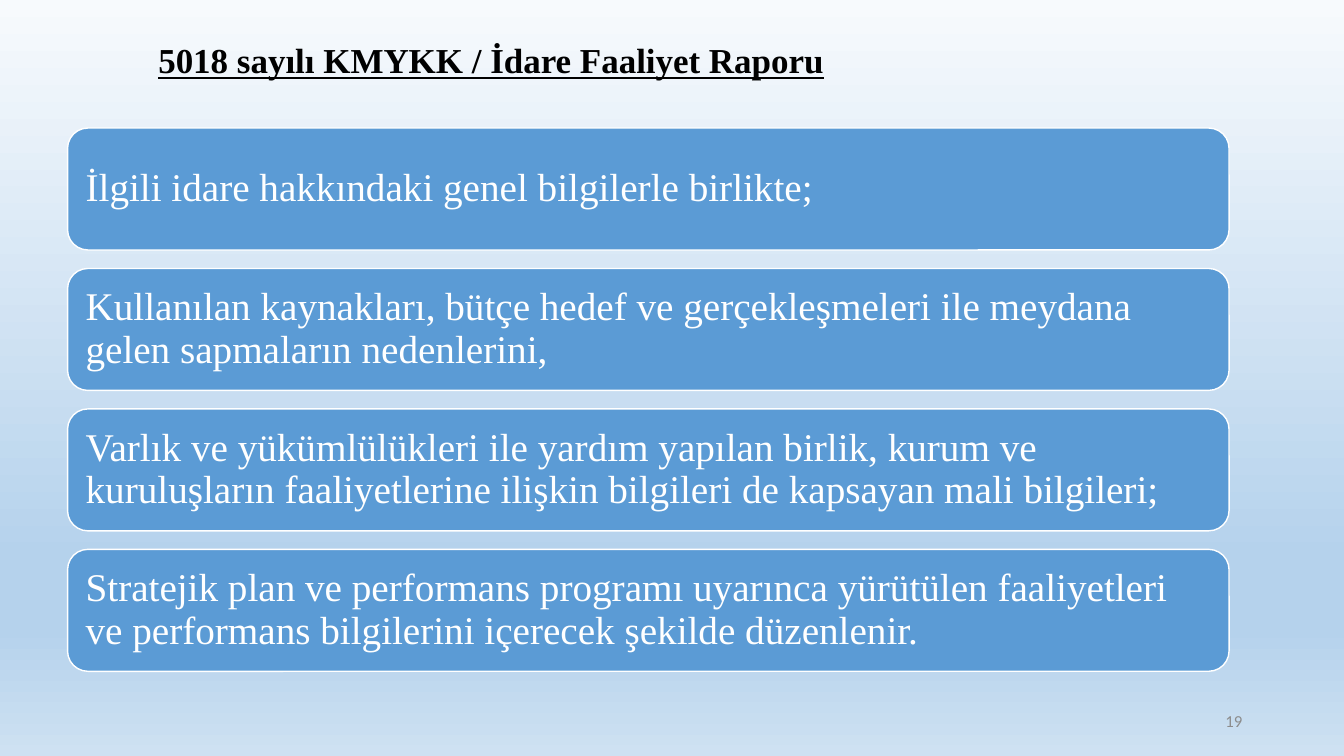
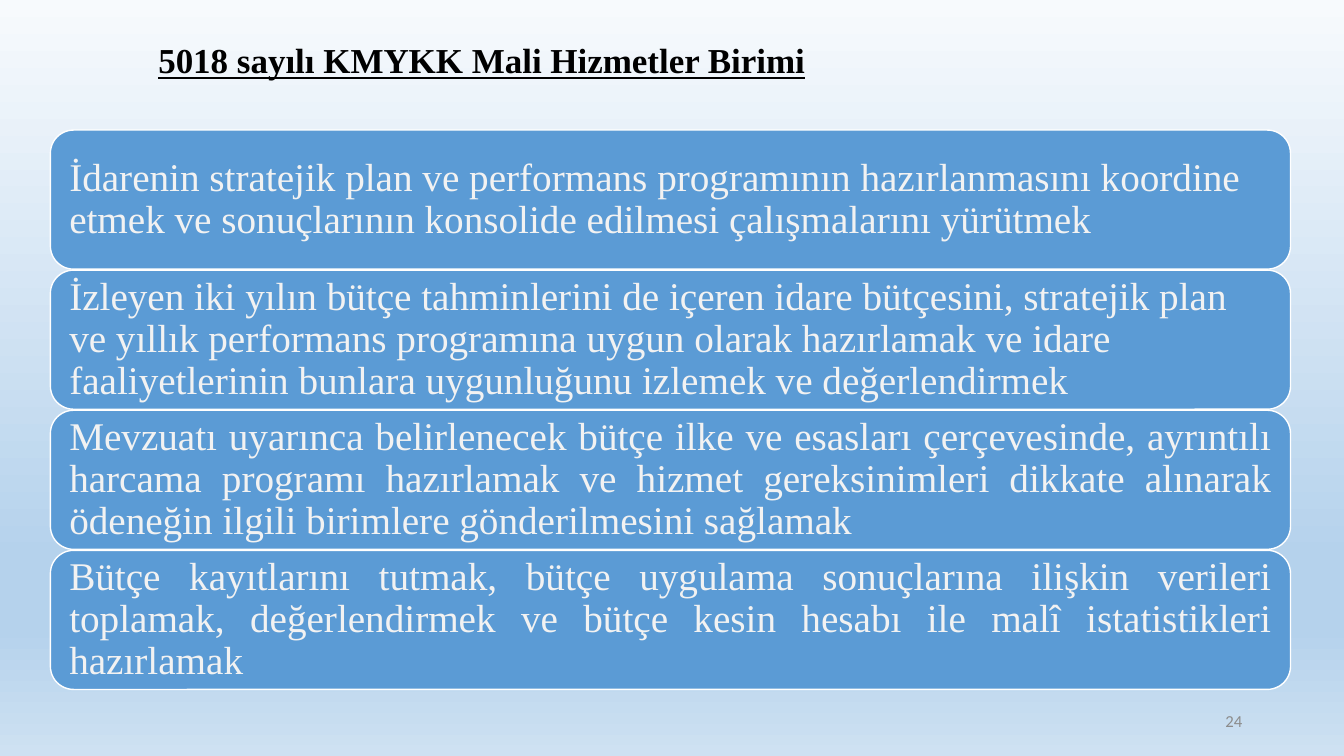
from pptx import Presentation
from pptx.dml.color import RGBColor
from pptx.enum.shapes import MSO_SHAPE as SHAPE
from pptx.enum.text import MSO_ANCHOR as ANCHOR, PP_ALIGN as ALIGN
from pptx.oxml.ns import qn
from pptx.util import Inches, Pt
from lxml import etree

COLORS = {
    "sky_top": "F7FAFD",
    "sky_mid": "B5D2EC",
    "sky_low": "CEE1F2",
    "box": "5B9BD5",
    "white": "FFFFFF",
    "pale": "F2F2F2",
    "black": "000000",
    "gray": "8C8C8C",
}
SERIF = "Times New Roman"


def rgb(name):
    return RGBColor.from_string(COLORS[name])


def write(sp, text, size, color, font=SERIF, align=ALIGN.LEFT, bold=False,
          underline=False, spacing=0.9, inset=None):
    tf = sp.text_frame
    tf.word_wrap = True
    tf.vertical_anchor = ANCHOR.MIDDLE
    if inset is not None:
        tf.margin_left = tf.margin_right = Inches(inset)
        tf.margin_top = tf.margin_bottom = Inches(inset)
    p = tf.paragraphs[0]
    p.alignment = align
    p.line_spacing = spacing
    r = p.add_run()
    r.text = text
    r.font.name = font
    r.font.size = Pt(size)
    r.font.bold = bold
    r.font.underline = underline
    r.font.color.rgb = rgb(color)


prs = Presentation()
prs.slide_width = Inches(13.33)
prs.slide_height = Inches(7.5)
layout = prs.slide_layouts.get_by_name("Title Only")

fill = prs.slide_master.background.fill
fill.gradient()
fill.gradient_angle = 270
stops = next(prs.slide_master.element.iter(qn("a:gsLst")))
for stop in list(stops):
    stops.remove(stop)
for pos, color in [(0, "sky_top"), (74, "sky_mid"), (83, "sky_mid"), (100, "sky_low")]:
    stop = etree.SubElement(stops, qn("a:gs"), pos=str(pos * 1000))
    etree.SubElement(stop, qn("a:srgbClr"), val=COLORS[color])

slides = [
    {
        "title": "5018 sayılı KMYKK / İdare Faaliyet Raporu",
        "number": "19",
        "left": 0.67, "top": 1.27, "width": 11.52, "height": 1.21, "bottom": 6.66,
        "color": "white",
        "boxes": [
            ("İlgili idare hakkındaki genel bilgilerle birlikte;", ALIGN.LEFT),
            ("Kullanılan kaynakları, bütçe hedef ve gerçekleşmeleri ile meydana "
             "gelen sapmaların nedenlerini,", ALIGN.LEFT),
            ("Varlık ve yükümlülükleri ile yardım yapılan birlik, kurum ve "
             "kuruluşların faaliyetlerine ilişkin bilgileri de kapsayan mali "
             "bilgileri;", ALIGN.LEFT),
            ("Stratejik plan ve performans programı uyarınca yürütülen faaliyetleri "
             "ve performans bilgilerini içerecek şekilde düzenlenir.", ALIGN.LEFT),
        ],
    },
    {
        "title": "5018 sayılı KMYKK Mali Hizmetler Birimi",
        "number": "24",
        "left": 0.5, "top": 1.29, "width": 12.3, "height": 1.38, "bottom": 6.84,
        "color": "pale",
        "boxes": [
            ("İdarenin stratejik plan ve performans programının hazırlanmasını "
             "koordine etmek ve sonuçlarının konsolide edilmesi çalışmalarını "
             "yürütmek", ALIGN.LEFT),
            ("İzleyen iki yılın bütçe tahminlerini de içeren idare bütçesini, "
             "stratejik plan ve yıllık performans programına uygun olarak "
             "hazırlamak ve idare faaliyetlerinin bunlara uygunluğunu izlemek ve "
             "değerlendirmek", ALIGN.LEFT),
            ("Mevzuatı uyarınca belirlenecek bütçe ilke ve esasları çerçevesinde, "
             "ayrıntılı harcama programı hazırlamak ve hizmet gereksinimleri "
             "dikkate alınarak ödeneğin ilgili birimlere gönderilmesini sağlamak",
             ALIGN.JUSTIFY),
            ("Bütçe kayıtlarını tutmak, bütçe uygulama sonuçlarına ilişkin verileri "
             "toplamak, değerlendirmek ve bütçe kesin hesabı ile malî "
             "istatistikleri hazırlamak", ALIGN.JUSTIFY),
        ],
    },
]

for data in slides:
    s = prs.slides.add_slide(layout)

    title = s.shapes.title
    title.left, title.top = Inches(1.47), Inches(0.22)
    title.width, title.height = Inches(10.52), Inches(0.8)
    write(title, data["title"], 25, "black", bold=True, underline=True)

    number = s.shapes.add_textbox(Inches(9.42), Inches(6.95), Inches(3), Inches(0.4))
    write(number, data["number"], 12, "gray", font="Calibri", align=ALIGN.RIGHT,
          spacing=1.0)

    boxes = data["boxes"]
    pitch = (data["bottom"] - data["top"] - data["height"]) / (len(boxes) - 1)
    for i, (text, align) in enumerate(boxes):
        sp = s.shapes.add_shape(
            SHAPE.ROUNDED_RECTANGLE, Inches(data["left"]),
            Inches(data["top"] + i * pitch), Inches(data["width"]),
            Inches(data["height"]))
        sp.shadow.inherit = False
        sp.fill.solid()
        sp.fill.fore_color.rgb = rgb("box")
        sp.line.color.rgb = rgb("white")
        sp.line.width = Pt(1)
        write(sp, text, 28, data["color"], align=align, inset=0.12)

prs.save("out.pptx")
